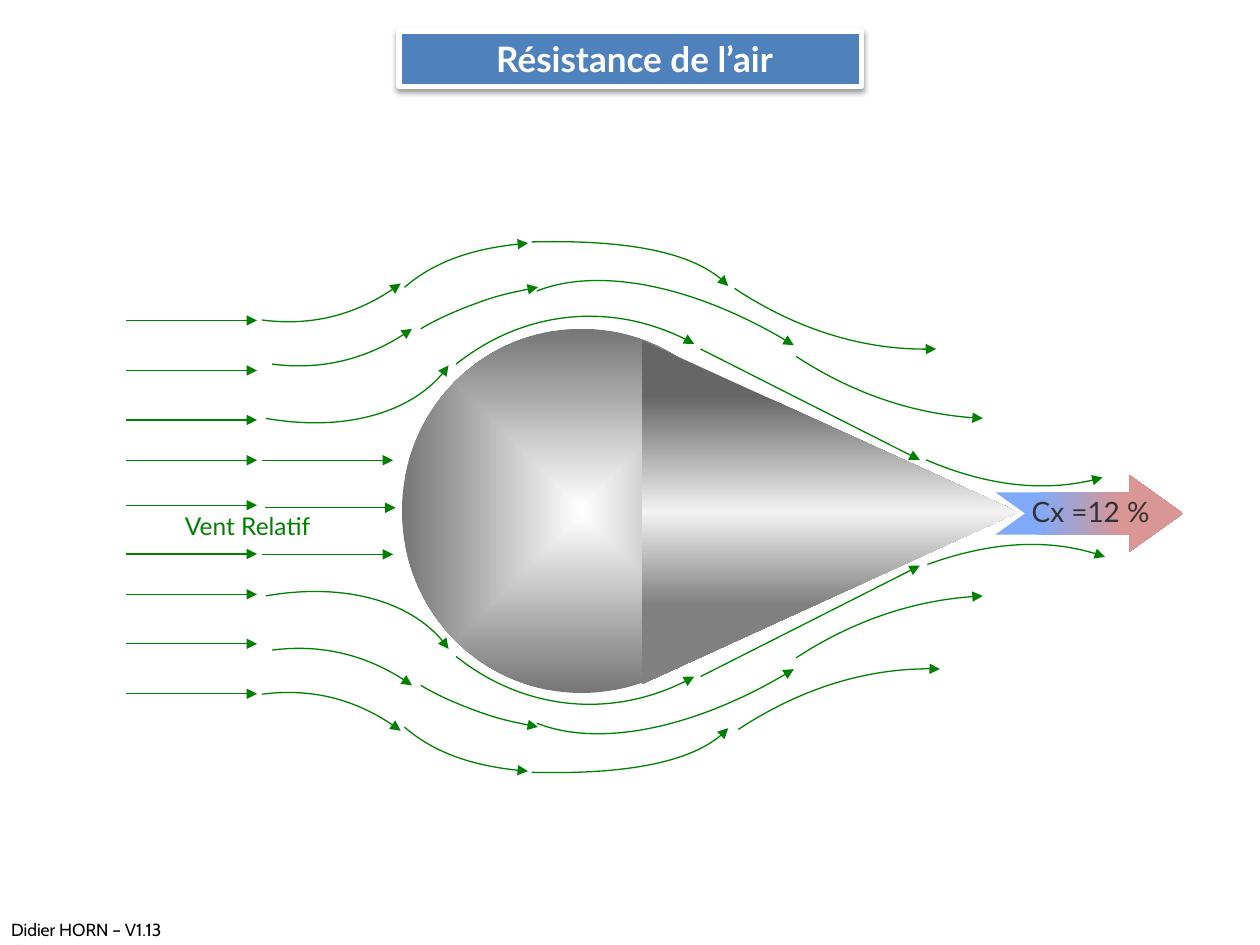
import copy
import math

import pptx
import pptx.util
import pptx.dml.color
import pptx.enum.shapes
import pptx.enum.text
import pptx.oxml
import pptx.oxml.ns

RGBColor = pptx.dml.color.RGBColor
SHAPE = pptx.enum.shapes.MSO_SHAPE
ALIGN = pptx.enum.text.PP_ALIGN
ANCHOR = pptx.enum.text.MSO_ANCHOR
qn = pptx.oxml.ns.qn
NAMESPACE = pptx.oxml.ns.nsdecls("a")

WIND_GREEN = RGBColor(0x00, 0x80, 0x00)
TITLE_BLUE = RGBColor(0x4F, 0x81, 0xBD)
WHITE = RGBColor(0xFF, 0xFF, 0xFF)
BLACK = RGBColor(0x00, 0x00, 0x00)
DARK_GREY = RGBColor(0x32, 0x32, 0x32)
MID_GREY = RGBColor(0x80, 0x80, 0x80)
EDGE_GREY = RGBColor(0x76, 0x76, 0x76)
DEEP_GREY = RGBColor(0x66, 0x66, 0x66)
PALE_GREY = RGBColor(0xF2, 0xF2, 0xF2)
DRAG_BLUE = RGBColor(0x80, 0xAA, 0xF9)
DRAG_RED = RGBColor(0xD9, 0x96, 0x94)

SLIDE_WIDTH = pptx.util.Inches(10)
SLIDE_HEIGHT = pptx.util.Inches(7.5)
COLUMNS, ROWS = 100, 75
AXIS = 40.25

WIND_ROWS = [25.43, 29.4, 33.33, 36.53]
MIRRORED_CURVES = [
    (AXIS, 0, 7.7, (23.8, 13.1), [(21.6, 28.9), (25.5, 29.4), (29.5, 28.4), (32.7, 26.1)]),
    (AXIS, 0, 195.2, (48.9, 32.2), [(32.1, 22.8), (34.4, 20.8), (37.8, 19.6), (41.9, 19.3)]),
    (AXIS, 0, 10, (22.7, 24.1), [(21.1, 33.2), (27.3, 34.3), (33.2, 32.6), (35.6, 29)]),
    (AXIS, 0, 7.7, (22.9, 9.5), [(20.8, 25.4), (24.7, 25.9), (28.6, 24.9), (31.8, 22.5)]),
    (AXIS, 0, 341.7, (43, 38.2), [(33.4, 26.1), (34.9, 25.2), (36.6, 24.5), (38.3, 23.9),
                                  (39.7, 23.4), (41.2, 23.1), (42.7, 22.8)]),
    (AXIS, 0, 32.3, (56.7, 37.3), [(42.6, 23.1), (47.7, 21.1), (55.7, 22.9), (63, 27.4)]),
    (AXIS, 0, 347.3, (27.3, 31.2), [(42.2, 19.2), (50.1, 19), (55.7, 20.3), (57.8, 22.7)]),
    (40.5, 0, 28.8, (46.9, 42.2), [(36.2, 28.9), (41.6, 24.6), (49, 23.9), (55.1, 27.3)]),
    (AXIS, 0, 32.2, (71.9, 14.4), [(63.2, 28.3), (67.8, 31.3), (73.1, 33), (78, 33.2)]),
    (40.4, 0.3, 33.1, (68, 8.1), [(58.3, 22.9), (63.3, 26.2), (69, 27.9), (74.3, 27.7)]),
]
WAKE_CURVES = [
    (36.4, (76.9, 21.2), [(73.5, 36.5), (78.4, 38.6), (83.4, 39.1), (87.5, 37.9)]),
    (326.8, (76.1, 60.3), [(73.6, 44.8), (78.6, 43), (83.6, 42.7), (87.7, 44.2)]),
]


def column(count):
    return round(SLIDE_WIDTH * count / COLUMNS)


def row(count):
    return round(SLIDE_HEIGHT * count / ROWS)


def grid_box(left, top, width, height):
    return column(left), row(top), column(width), row(height)


def mirror(points, axis, shift=0):
    return [(x + shift, 2 * axis - y) for x, y in points]


def turn(points, degrees):
    cosine, sine = math.cos(math.radians(degrees)), math.sin(math.radians(degrees))
    return [(x * cosine - y * sine, x * sine + y * cosine) for x, y in points]


def level_points(points, rotation):
    level = turn(points, -rotation)
    middle = [(min(values) + max(values)) / 2 for values in zip(*level)]
    center = turn([middle], rotation)[0]
    return [(x - middle[0] + center[0], y - middle[1] + center[1]) for x, y in level]


def set_values(target, values):
    for name, value in values.items():
        setattr(target, name, value)


def style_flow(shape):
    shape.line.color.rgb = WIND_GREEN
    shape.line.width = pptx.util.Pt(0.75)
    outline = shape._element.spPr.find(qn("a:ln"))
    outline.append(pptx.oxml.parse_xml(f'<a:tailEnd {NAMESPACE} type="triangle"/>'))


def add_straight_flow(slide, start, end):
    connector = slide.shapes.add_connector(
        pptx.enum.shapes.MSO_CONNECTOR.STRAIGHT,
        column(start[0]), row(start[1]), column(end[0]), row(end[1]))
    style_flow(connector)
    connector._element.spPr.append(pptx.oxml.parse_xml(f'<a:effectLst {NAMESPACE}/>'))


def add_curved_flow(slide, rotation, pivot, points):
    level = level_points(points + [pivot], rotation)
    start, *rest = [(column(x), row(y)) for x, y in level]
    builder = slide.shapes.build_freeform(*start, scale=1.0)
    builder.add_line_segments(rest, close=False)
    shape = builder.convert_to_shape()
    arc = next(shape._element.iter(qn("a:path")))
    *segments, pivot_line = arc.findall(qn("a:lnTo"))
    arc.remove(pivot_line)
    for first in range(0, len(segments), 3):
        curve = arc.makeelement(qn("a:cubicBezTo"))
        for segment in segments[first:first + 3]:
            curve.append(segment[0])
            arc.remove(segment)
        arc.append(curve)
    sector = copy.deepcopy(arc)
    sector.append(pivot_line)
    sector.append(sector.makeelement(qn("a:close")))
    sector.set("stroke", "0")
    arc.set("fill", "none")
    arc.addnext(sector)
    shape.rotation = rotation
    shape.shadow.inherit = False
    shape.fill.background()
    style_flow(shape)


def add_gradient_shape(slide, kind, box, stops, direction, adjustments=(), rotation=0):
    shape = slide.shapes.add_shape(kind, *grid_box(*box))
    for index, value in enumerate(adjustments):
        shape.adjustments[index] = value
    shape.rotation = rotation
    shape.shadow.inherit = False
    shape.line.fill.background()
    shape.fill.background()
    properties = shape._element.spPr
    stop_list = "".join(
        f'<a:gs pos="{position * 1000}"><a:srgbClr val="{color}"/></a:gs>'
        for position, color in stops)
    gradient = pptx.oxml.parse_xml(
        f'<a:gradFill {NAMESPACE} rotWithShape="1">'
        f'<a:gsLst>{stop_list}</a:gsLst>{direction}</a:gradFill>')
    properties.replace(properties.find(qn("a:noFill")), gradient)


def write_text(shape, text, size, color, font="Lato", align=ALIGN.LEFT,
               anchor=ANCHOR.TOP, bold=False):
    set_values(shape.text_frame, {"word_wrap": True, "vertical_anchor": anchor})
    paragraph = shape.text_frame.paragraphs[0]
    paragraph.alignment = align
    run = paragraph.add_run()
    run.text = text
    set_values(run.font, {"name": font, "size": pptx.util.Pt(size), "bold": bold})
    run.font.color.rgb = color
    return paragraph


def add_label(slide, box, text, size, color, **options):
    write_text(slide.shapes.add_textbox(*grid_box(*box)), text, size, color, **options)


def add_title(slide):
    shape = slide.shapes.add_shape(SHAPE.RECTANGLE, *grid_box(31.67, 2.46, 36.7, 4.4))
    shape.fill.solid()
    shape.fill.fore_color.rgb = TITLE_BLUE
    shape.line.color.rgb = WHITE
    shape.line.width = pptx.util.Pt(3)
    shape.shadow.inherit = False
    effects = shape._element.spPr.find(qn("a:effectLst"))
    effects.append(pptx.oxml.parse_xml(
        f'<a:outerShdw {NAMESPACE} blurRad="{pptx.util.Pt(3.1)}" '
        f'dist="{pptx.util.Pt(1.6)}" dir="5400000" rotWithShape="0">'
        f'<a:srgbClr val="{BLACK}"><a:alpha val="38000"/></a:srgbClr></a:outerShdw>'))
    paragraph = write_text(shape, "Résistance de l’air", 20, WHITE,
                           align=ALIGN.CENTER, anchor=ANCHOR.MIDDLE, bold=True)
    paragraph._p.get_or_add_pPr().set("marL", str(column(0.7)))


def add_body(slide):
    centered = '<a:path path="shape"><a:fillToRect l="50000" t="50000" r="50000" b="50000"/></a:path>'
    add_gradient_shape(slide, SHAPE.OVAL, (31.9, 26.1, 28.5, 28.9),
                       [(0, WHITE), (100, EDGE_GREY)], centered)
    add_gradient_shape(slide, SHAPE.ISOSCELES_TRIANGLE, (52.23, 25.7, 27.3, 29.9),
                       [(16, DEEP_GREY), (50, PALE_GREY), (77, MID_GREY)],
                       '<a:lin ang="0" scaled="0"/>', [0.5], 90)


def add_airflow(slide):
    for y in WIND_ROWS + [40.1] + [2 * AXIS - y for y in WIND_ROWS]:
        add_straight_flow(slide, (10, y), (20.4, y))
    for x, y in [(20.8, 36.53), (21, 40.3), (20.8, 44)]:
        add_straight_flow(slide, (x, y), (x + 10.4, y))
    side = [(55.6, 27.7), (73, 36.5)]
    for points in (side, mirror(side, 40.7)):
        add_straight_flow(slide, *points)
    for axis, shift, rotation, pivot, points in MIRRORED_CURVES:
        add_curved_flow(slide, rotation, pivot, points)
        *lower_points, lower_pivot = mirror(points + [pivot], axis, shift)
        add_curved_flow(slide, 360 - rotation, lower_pivot, lower_points)
    for wake in WAKE_CURVES:
        add_curved_flow(slide, *wake)


def main():
    presentation = pptx.Presentation()
    set_values(presentation, {"slide_width": SLIDE_WIDTH, "slide_height": SLIDE_HEIGHT})
    slide = presentation.slides.add_slide(presentation.slide_layouts[6])
    add_label(slide, (-0.1, 72.45, 15, 2.7), "Didier HORN – V1.13 ©", 10, BLACK, font="Cabin")
    add_body(slide)
    add_airflow(slide)
    add_gradient_shape(slide, SHAPE.NOTCHED_RIGHT_ARROW, (79, 37.7, 14.9, 6.1),
                       [(22, DRAG_BLUE), (67, DRAG_RED)],
                       '<a:lin ang="0" scaled="0"/>', [0.55, 0.7])
    add_label(slide, (80.9, 38.8, 12, 3.7), "Cx =12 %", 16, DARK_GREY)
    add_label(slide, (8.9, 40.1, 21.5, 3.4), "Vent Relatif", 14, WIND_GREEN, align=ALIGN.CENTER)
    add_title(slide)
    presentation.save("out.pptx")


if __name__ == "__main__":
    main()
